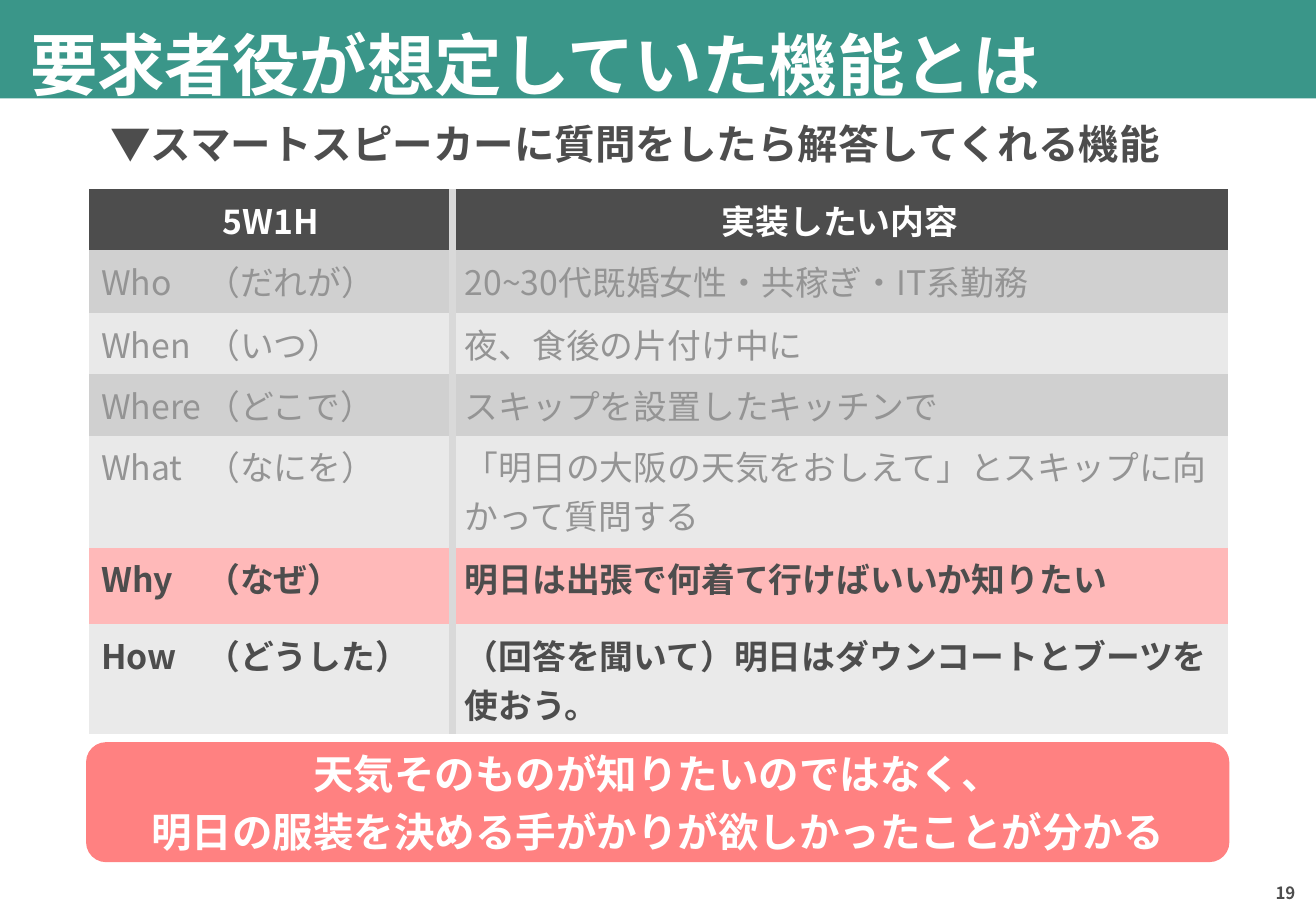
"""Build the slide on the function the requester had in mind, as a 5W1H table."""
from lxml import etree
from pptx import Presentation
from pptx.dml.color import RGBColor
from pptx.enum.shapes import MSO_SHAPE
from pptx.enum.text import MSO_ANCHOR, PP_ALIGN
from pptx.oxml.ns import qn
from pptx.util import Cm, Pt

LEFT, CENTER, RIGHT = PP_ALIGN.LEFT, PP_ALIGN.CENTER, PP_ALIGN.RIGHT
MIDDLE, TOP = MSO_ANCHOR.MIDDLE, MSO_ANCHOR.TOP
RECTANGLE, ROUNDED = MSO_SHAPE.RECTANGLE, MSO_SHAPE.ROUNDED_RECTANGLE

FONT = "Noto Sans CJK JP"
WHITE = RGBColor(0xFF, 0xFF, 0xFF)
DARK = RGBColor(0x4D, 0x4D, 0x4D)
FADED = RGBColor(0x94, 0x94, 0x94)
BAND = RGBColor(0xD0, 0xD0, 0xD0)
PALE = RGBColor(0xE9, 0xE9, 0xE9)
LIGHT = RGBColor(0xEA, 0xEA, 0xEA)
PINK = RGBColor(0xFF, 0xB9, 0xB9)
CORAL = RGBColor(0xFF, 0x81, 0x81)
TEAL = RGBColor(0x3A, 0x96, 0x89)
DIVIDER = RGBColor(0xD9, 0xD9, 0xD9)
PLAIN_TABLE = "{2D5ABB26-0587-4C30-8999-92F81FD0307C}"

TITLE = "要求者役が想定していた機能とは"
SUBTITLE = "▼スマートスピーカーに質問をしたら解答してくれる機能"
CONCLUSION = ["天気そのものが知りたいのではなく、",
              "明日の服装を決める手がかりが欲しかったことが分かる"]
PAGE = "19"
HEADINGS = ["5W1H", "実装したい内容"]
ANSWERS = [
    ("Who", "（だれが）", "20~30代既婚女性・共稼ぎ・IT系勤務", BAND, False, 1.32),
    ("When", "（いつ）", "夜、食後の片付け中に", PALE, False, 1.28),
    ("Where", "（どこで）", "スキップを設置したキッチンで", BAND, False, 1.28),
    ("What", "（なにを）", "「明日の大阪の天気をおしえて」とスキップに向かって質問する",
     PALE, False, 2.34),
    ("Why", "（なぜ）", "明日は出張で何着て行けばいいか知りたい", PINK, True, 1.6),
    ("How", "（どうした）", "（回答を聞いて）明日はダウンコートとブーツを使おう。",
     LIGHT, True, 2.3),
]
HEADING_HEIGHT = 1.28
COLUMN_WIDTHS = [7.6, 16.2]
GLOSS_TAB = Cm(2.2)


def write(frame, lines, size=20, color=DARK, bold=True, align=LEFT,
          after=0, spacing=None, tab=None):
    """Fill a text frame with one formatted paragraph per line."""
    for index, line in enumerate(lines):
        paragraph = frame.paragraphs[0] if index == 0 else frame.add_paragraph()
        paragraph.alignment = align
        paragraph.space_after = Pt(after)
        if spacing:
            paragraph.line_spacing = spacing
        if tab:
            stops = etree.SubElement(paragraph._p.get_or_add_pPr(), qn("a:tabLst"))
            etree.SubElement(stops, qn("a:tab"), pos=str(tab), algn="l")
        run = paragraph.add_run()
        run.text = line
        run.font.size = Pt(size)
        run.font.bold = bold
        run.font.color.rgb = color
        run.font.name = FONT
        etree.SubElement(run.font._element, qn("a:ea"), typeface=FONT)


def set_up(frame, anchor, margin=None):
    frame.word_wrap = True
    frame.vertical_anchor = anchor
    if margin is not None:
        frame.margin_left = frame.margin_right = margin
        frame.margin_top = frame.margin_bottom = margin
    return frame


def add_panel(slide, kind, box, fill):
    panel = slide.shapes.add_shape(kind, *map(Cm, box))
    panel.shadow.inherit = False
    panel.fill.solid()
    panel.fill.fore_color.rgb = fill
    panel.line.fill.background()
    return set_up(panel.text_frame, MIDDLE, 0)


def add_label(slide, box, anchor=TOP, margin=None):
    return set_up(slide.shapes.add_textbox(*map(Cm, box)).text_frame, anchor, margin)


def add_divider(cell, side):
    edge = etree.Element(qn(f"a:{side}"), w=str(Pt(4.5)))
    fill = etree.SubElement(edge, qn("a:solidFill"))
    etree.SubElement(fill, qn("a:srgbClr"), val=str(DIVIDER))
    cell._tc.get_or_add_tcPr().insert(0, edge)


def add_answers(slide):
    rows = [(HEADINGS, DARK, HEADING_HEIGHT, dict(color=WHITE, align=CENTER))]
    for word, gloss, answer, fill, stressed, height in ANSWERS:
        style = dict(color=DARK if stressed else FADED, bold=stressed)
        rows.append(([f"{word}\t{gloss}", answer], fill, height, style))

    total = sum(height for _, _, height, _ in rows)
    frame = slide.shapes.add_table(len(rows), len(COLUMN_WIDTHS), Cm(1.86), Cm(3.95),
                                   Cm(sum(COLUMN_WIDTHS)), Cm(total))
    table = frame.table
    table.horz_banding = False
    table._tbl.tblPr.find(qn("a:tableStyleId")).text = PLAIN_TABLE
    for column, width in zip(table.columns, COLUMN_WIDTHS):
        column.width = Cm(width)
    for r, (texts, fill, height, style) in enumerate(rows):
        table.rows[r].height = Cm(height)
        for c, text in enumerate(texts):
            cell = table.cell(r, c)
            cell.fill.solid()
            cell.fill.fore_color.rgb = fill
            add_divider(cell, "lnL" if c else "lnR")
            write(cell.text_frame, [text], tab=GLOSS_TAB if "\t" in text else None,
                  **style)


def main():
    deck = Presentation()
    deck.slide_width, deck.slide_height = Cm(27.51), Cm(19.05)
    slide = deck.slides.add_slide(deck.slide_layouts[6])

    page = add_label(slide, (20.65, 18.31, 6.43, 0.71), MIDDLE, 0)
    write(page, [PAGE], size=10, align=RIGHT)
    add_answers(slide)
    conclusion = add_panel(slide, ROUNDED, (1.8, 15.52, 23.9, 2.51), CORAL)
    write(conclusion, CONCLUSION, size=24, color=WHITE, align=CENTER, after=6)
    title = add_panel(slide, RECTANGLE, (0, -0.08, 27.51, 2.14), TEAL)
    title.margin_left = Cm(0.63)
    write(title, [TITLE], size=40, color=WHITE, after=6, spacing=1.4)
    subtitle = add_label(slide, (2.06, 2.36, 22.91, 1.27))
    write(subtitle, [SUBTITLE], size=24)
    deck.save("out.pptx")


if __name__ == "__main__":
    main()
